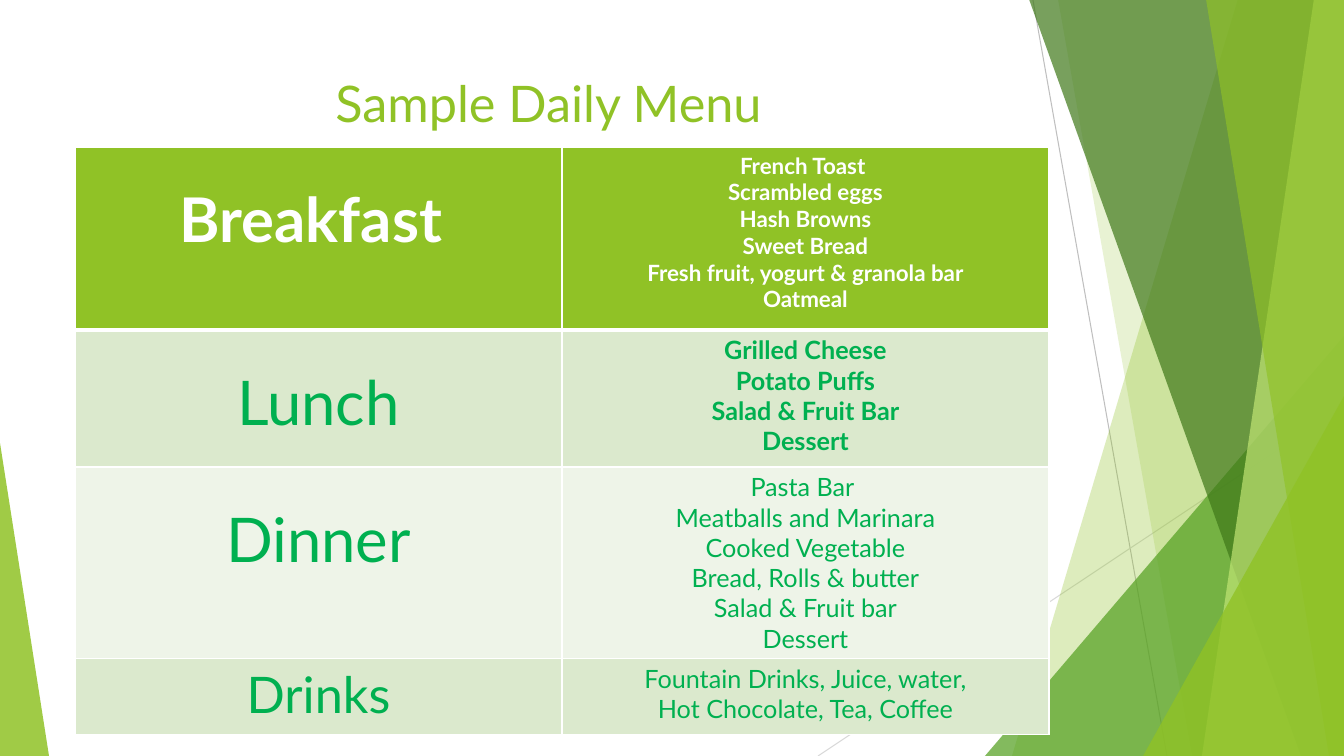
from lxml.etree import SubElement
from pptx import Presentation
from pptx.dml.color import RGBColor
from pptx.enum.shapes import MSO_CONNECTOR, MSO_SHAPE
from pptx.enum.text import MSO_ANCHOR, PP_ALIGN
from pptx.oxml import parse_xml
from pptx.oxml.ns import nsdecls, qn
from pptx.util import Pt

PX = 914400 / 100.8
WIDTH, HEIGHT = 1344, 756
FONT = "Lato"
WHITE = RGBColor(0xFF, 0xFF, 0xFF)
LIME = RGBColor(0x90, 0xC2, 0x26)
PALE_LIME = RGBColor(0xC0, 0xE4, 0x74)
LEAF = RGBColor(0x54, 0xA0, 0x21)
FOREST = RGBColor(0x3F, 0x78, 0x19)
MENU_GREEN = RGBColor(0x00, 0xB0, 0x50)
BAND_DARK = RGBColor(0xDB, 0xE9, 0xCD)
BAND_LIGHT = RGBColor(0xEE, 0xF4, 0xE8)
GRAY = RGBColor(0xBF, 0xBF, 0xBF)
LIGHT_GRAY = RGBColor(0xD9, 0xD9, 0xD9)

COLUMN_WIDTH = 487
EMPTY_LINE = 30
MENU = [
    dict(height=183, meal="Breakfast ", meal_size=44, drop=EMPTY_LINE, size=16,
         fill=LIME, color=WHITE, meal_bold=True, bold=True,
         dishes=["French Toast ", "Scrambled eggs", "Hash Browns", "Sweet Bread",
                 "Fresh fruit, yogurt & granola bar", "Oatmeal"]),
    dict(height=137, meal="Lunch", meal_size=44, drop=EMPTY_LINE, size=18,
         fill=BAND_DARK, color=MENU_GREEN, meal_bold=False, bold=True,
         dishes=["Grilled Cheese", "Potato Puffs", "Salad & Fruit Bar", "Dessert"]),
    dict(height=191, meal="Dinner", meal_size=44, drop=EMPTY_LINE, size=18,
         fill=BAND_LIGHT, color=MENU_GREEN, meal_bold=False, bold=False,
         dishes=["Pasta Bar ", "Meatballs and Marinara", "Cooked Vegetable",
                 "Bread, Rolls & butter", "Salad & Fruit bar", "Dessert"]),
    dict(height=76, meal="Drinks", meal_size=36, drop=0, size=18,
         fill=BAND_DARK, color=MENU_GREEN, meal_bold=False, bold=False,
         dishes=["Fountain Drinks, Juice, water,", "Hot Chocolate, Tea, Coffee"]),
]


def px(length):
    """Turn pixels into EMU."""
    return round(length * PX)


def write_text(text_frame, lines, *, size, color, bold=False):
    """Write centred lines, one paragraph each."""
    for index, line in enumerate(lines):
        paragraph = text_frame.paragraphs[0] if index == 0 else text_frame.add_paragraph()
        paragraph.alignment = PP_ALIGN.CENTER
        run = paragraph.add_run()
        run.text = line
        run.font.name = FONT
        run.font.size = Pt(size)
        run.font.bold = bold
        run.font.color.rgb = color


def paint(shape, color, opacity):
    """Give a shape a translucent fill without line or shadow."""
    shape.shadow.inherit = False
    shape.line.fill.background()
    shape.fill.solid()
    shape.fill.fore_color.rgb = color
    color_element = shape.fill._xPr.find(qn("a:solidFill"))[0]
    SubElement(color_element, qn("a:alpha"), val=str(opacity * 1000))


def add_hairline(slide, start, end, color):
    """Draw a thin straight line."""
    line = slide.shapes.add_connector(MSO_CONNECTOR.STRAIGHT, *map(px, start + end))
    line.line.color.rgb = color
    line.line.width = Pt(0.75)
    SubElement(line._element.spPr, qn("a:effectLst"))


def add_blade(slide, box, top_x, bottom_x, color, opacity):
    """Fill the box to the right of a slanted edge."""
    left, top, width, height = box
    right, bottom = left + width, top + height
    builder = slide.shapes.build_freeform(left + top_x, top, scale=PX)
    builder.add_line_segments(
        [(right, top), (right, bottom), (left + bottom_x, bottom)], close=True)
    paint(builder.convert_to_shape(), color, opacity)


def add_corner(slide, box, apex, color, opacity):
    """Draw a right triangle whose apex is at the given share of its width."""
    triangle = slide.shapes.add_shape(MSO_SHAPE.ISOSCELES_TRIANGLE, *map(px, box))
    triangle.adjustments[0] = apex
    paint(triangle, color, opacity)


def add_facets(slide, box):
    """Layer the green facets along the sides of the box."""
    left, top, width, height = box
    right, bottom = left + width, top + height
    add_hairline(slide, (right - 311, top), (right - 177, bottom), GRAY)
    add_hairline(slide, (right, top + 406), (right - 526, bottom), LIGHT_GRAY)

    def blade(blade_width, top_x, bottom_x, color, opacity):
        """Place a blade against the right side."""
        blade_box = (right - blade_width, top - 1, blade_width, height + 1)
        add_blade(slide, blade_box, top_x, bottom_x, color, opacity)

    def corner(corner_width, corner_height, color, opacity):
        """Place a triangle in the bottom right corner."""
        corner_box = (right - corner_width, bottom - corner_height,
                      corner_width, corner_height)
        add_corner(slide, corner_box, 1, color, opacity)

    blade(332, 226, 0, LIME, 30)
    blade(286, 0, 134, LIME, 20)
    corner(359, 420, LEAF, 72)
    blade(315, 0, 272, FOREST, 70)
    blade(142, 112, 0, PALE_LIME, 70)
    blade(138, 0, 123, LIME, 65)
    corner(201, 360, LIME, 80)
    add_corner(slide, (left, bottom - 313, 49, 313), 0, LIME, 85)


def add_title(slide, box):
    """Write the slide title at the top of the box."""
    text_frame = slide.shapes.add_textbox(*map(px, box)).text_frame
    text_frame.word_wrap = True
    text_frame.vertical_anchor = MSO_ANCHOR.TOP
    write_text(text_frame, ["Sample Daily Menu"], size=36, color=LIME)


def format_cell(cell, fill, top_width, bottom_width):
    """Fill a cell and give it white borders."""
    cell.fill.solid()
    cell.fill.fore_color.rgb = fill
    properties = cell._tc.get_or_add_tcPr()
    widths = {"lnL": 1, "lnR": 1, "lnT": top_width, "lnB": bottom_width}
    for index, (edge, width) in enumerate(widths.items()):
        properties.insert(index, parse_xml(
            f'<a:{edge} {nsdecls("a")} w="{Pt(width)}"><a:solidFill>'
            f'<a:srgbClr val="{WHITE}"/></a:solidFill></a:{edge}>'))


def add_menu(slide, left, top):
    """Build the table of meals and dishes."""
    height = sum(row["height"] for row in MENU)
    frame = slide.shapes.add_table(
        len(MENU), 2, px(left), px(top), px(2 * COLUMN_WIDTH), px(height))
    table = frame.table
    for column in table.columns:
        column.width = px(COLUMN_WIDTH)
    for index, row in enumerate(MENU):
        table.rows[index].height = px(row["height"])
        meal, dishes = table.rows[index].cells
        for cell in (meal, dishes):
            format_cell(cell, row["fill"], 3 if index == 1 else 1, 3 if index == 0 else 1)
        meal.margin_top = px(5 + row["drop"])
        write_text(meal.text_frame, [row["meal"]], size=row["meal_size"],
                   color=row["color"], bold=row["meal_bold"])
        write_text(dishes.text_frame, row["dishes"], size=row["size"],
                   color=row["color"], bold=row["bold"])


def main():
    """Build and save the menu slide."""
    presentation = Presentation()
    presentation.slide_width = px(WIDTH)
    presentation.slide_height = px(HEIGHT)
    slide = presentation.slides.add_slide(presentation.slide_layouts[6])
    add_facets(slide, (0, 0, WIDTH, HEIGHT))
    add_title(slide, (75, 67, 947, 145))
    add_menu(slide, 75, 147)
    presentation.save("out.pptx")


if __name__ == "__main__":
    main()
